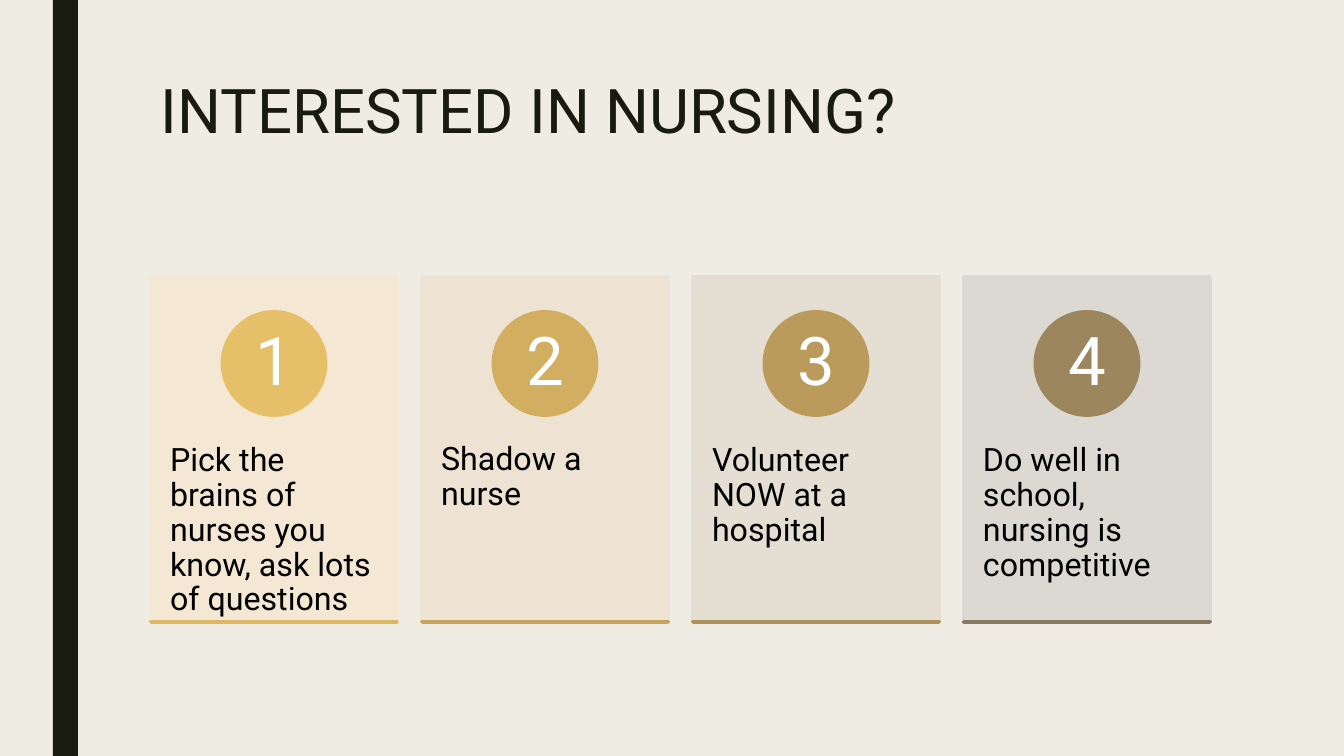
"""Build the "Interested in nursing?" slide with four numbered cards."""
import pptx
import pptx.util
import pptx.dml.color
import pptx.enum.shapes
import pptx.enum.text
import pptx.oxml.ns
import lxml.etree

SLIDE = (1344, 756)
SCALE = 914400 / 100.8
FONT = "Roboto"
BACKGROUND, DARK, BLACK, WHITE = "EFEDE3", "191B0E", "000000", "FFFFFF"
TITLE = "INTERESTED IN NURSING?"
CARDS = [
    ("Pick the brains of nurses you know, ask lots of questions", "F5E8D4", "E6C069", "DDB764"),
    ("Shadow a nurse", "EEE3D2", "D2AE60", "C6A45D"),
    ("Volunteer NOW at a hospital", "E5DDD1", "BA9B5C", "AC915B"),
    ("Do well in school, nursing is competitive", "DAD7D2", "9B865D", "897B61"),
]

SIDE_BAR = (53, 0, 25, 756)
TITLE_BOX = (151, 76, 1058, 163)
ROW_LEFT, ROW_WIDTH = 151, 1059
CARD_TOP, CARD_WIDTH, CARD_HEIGHT = 277, 246, 345
CAPTION_TOP, CAPTION_HEIGHT = 408, 207
CIRCLE_TOP, CIRCLE_SIZE, NUMBER_SIZE = 312, 103, 73
CARD_GAP = (ROW_WIDTH - len(CARDS) * CARD_WIDTH) / (len(CARDS) - 1)

RECTANGLE = pptx.enum.shapes.MSO_SHAPE.RECTANGLE
OVAL = pptx.enum.shapes.MSO_SHAPE.OVAL
ANCHOR = pptx.enum.text.MSO_ANCHOR
ALIGN = pptx.enum.text.PP_ALIGN

TITLE_STYLE = {"size": 44, "color": DARK, "insets": (10, 5),
               "paragraph": {"line_spacing": 0.89}}
CAPTION_STYLE = {"size": 23, "color": BLACK, "insets": (19, 36),
                 "paragraph": {"line_spacing": 0.9}}
NUMBER_STYLE = {"size": 48, "color": WHITE, "insets": (8, 1),
                "frame": {"vertical_anchor": ANCHOR.MIDDLE},
                "paragraph": {"line_spacing": 0.9, "alignment": ALIGN.CENTER}}


def px(length):
    return pptx.util.Emu(round(length * SCALE))


def rgb(value):
    return pptx.dml.color.RGBColor.from_string(value)


def set_attributes(target, values):
    for name, value in values.items():
        setattr(target, name, value)


def add_block(slide, kind, box, color, outlined=True, opacity=100):
    shape = slide.shapes.add_shape(kind, *map(px, box))
    shape.shadow.inherit = False
    shape.fill.solid()
    shape.fill.fore_color.rgb = rgb(color)
    if outlined:
        shape.line.color.rgb = rgb(color)
        shape.line.width = pptx.util.Pt(2.75)
    else:
        shape.line.fill.background()
    if opacity < 100:
        for element in shape.element.spPr.iter(pptx.oxml.ns.qn("a:srgbClr")):
            alpha = lxml.etree.SubElement(element, pptx.oxml.ns.qn("a:alpha"))
            alpha.set("val", str(opacity * 1000))


def add_text(slide, box, text, style):
    frame = slide.shapes.add_textbox(*map(px, box)).text_frame
    across, down = map(px, style["insets"])
    set_attributes(frame, {"word_wrap": True, "margin_left": across, "margin_right": across,
                           "margin_top": down, "margin_bottom": down,
                           **style.get("frame", {})})
    paragraph = frame.paragraphs[0]
    set_attributes(paragraph, style["paragraph"])
    run = paragraph.add_run()
    run.text = text
    set_attributes(run.font, {"name": FONT, "size": pptx.util.Pt(style["size"])})
    run.font.color.rgb = rgb(style["color"])


def add_card(slide, index, caption, card_color, circle_color, rule_color):
    left = ROW_LEFT + index * (CARD_WIDTH + CARD_GAP)
    circle_left = left + (CARD_WIDTH - CIRCLE_SIZE) / 2
    inset = (CIRCLE_SIZE - NUMBER_SIZE) / 2
    add_block(slide, RECTANGLE, (left, CARD_TOP, CARD_WIDTH, CARD_HEIGHT), card_color, opacity=90)
    add_text(slide, (left, CAPTION_TOP, CARD_WIDTH, CAPTION_HEIGHT), caption, CAPTION_STYLE)
    add_block(slide, OVAL, (circle_left, CIRCLE_TOP, CIRCLE_SIZE, CIRCLE_SIZE), circle_color)
    add_text(slide, (circle_left + inset, CIRCLE_TOP + inset, NUMBER_SIZE, NUMBER_SIZE),
             str(index + 1), NUMBER_STYLE)
    add_block(slide, RECTANGLE, (left, CARD_TOP + CARD_HEIGHT, CARD_WIDTH, 0), rule_color)


def main():
    presentation = pptx.Presentation()
    presentation.slide_width, presentation.slide_height = map(px, SLIDE)
    slide = presentation.slides.add_slide(presentation.slide_layouts[6])
    slide.background.fill.solid()
    slide.background.fill.fore_color.rgb = rgb(BACKGROUND)
    add_block(slide, RECTANGLE, SIDE_BAR, DARK, outlined=False)
    add_text(slide, TITLE_BOX, TITLE, TITLE_STYLE)
    for index, card in enumerate(CARDS):
        add_card(slide, index, *card)
    presentation.save("out.pptx")


if __name__ == "__main__":
    main()
